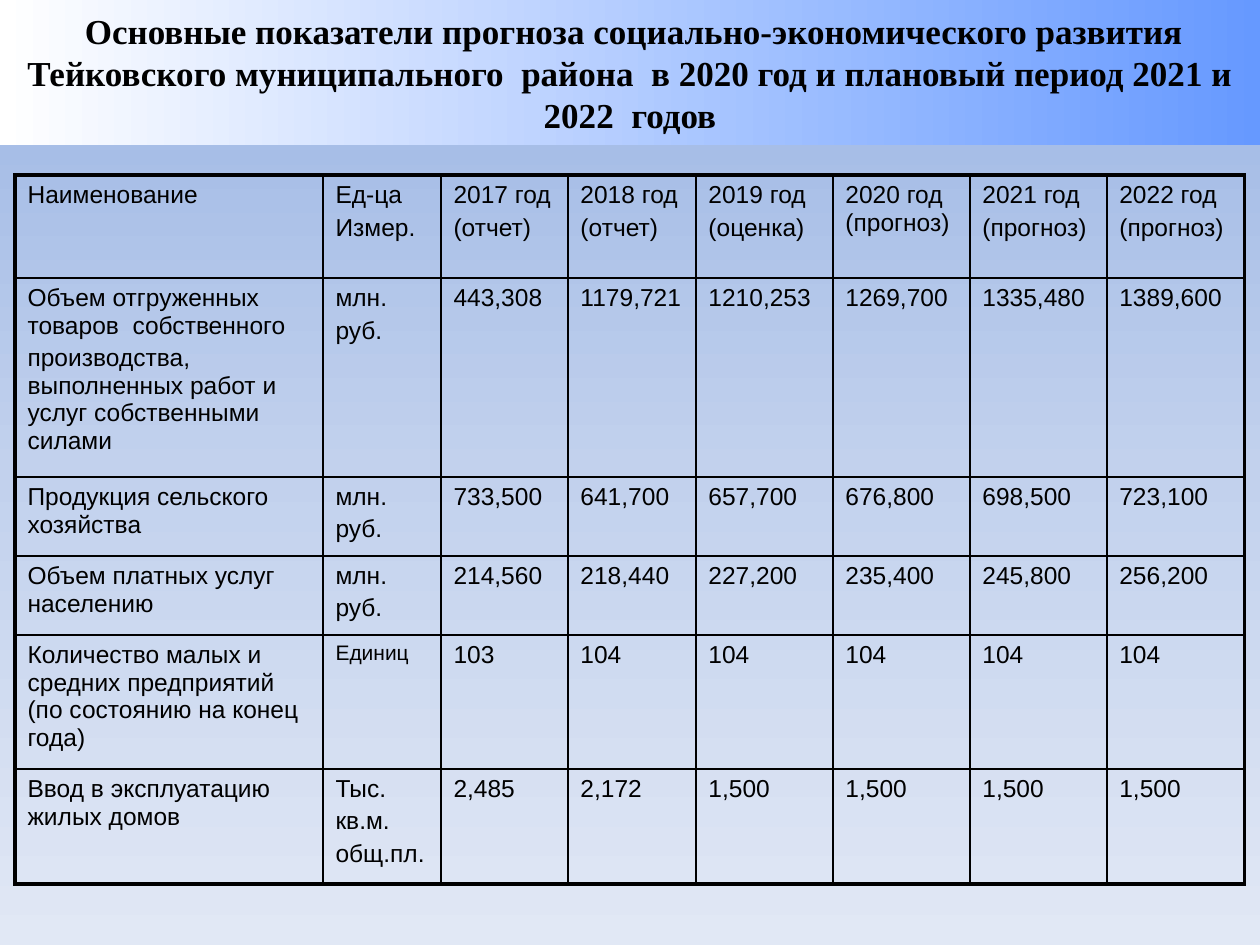
from copy import deepcopy
from pptx import Presentation
from pptx.dml.color import RGBColor as Rgb
from pptx.enum.shapes import MSO_SHAPE as Shape
from pptx.enum.text import MSO_ANCHOR as Anchor, PP_ALIGN as Align
from pptx.oxml.ns import qn
from pptx.oxml.xmlchemy import OxmlElement as Node
from pptx.util import Pt

PX = 914400 / 126
HEX = {"ink": "000000", "white": "FFFFFF", "blue": "6699FF",
       "top": "9AB5E4", "mid": "C2D1ED", "low": "E1E8F5"}
HEAD = ("Основные показатели прогноза социально-экономического развития "
        "Тейковского муниципального  района  в 2020 год и плановый период "
        "2021 и 2022  годов")
COLS = [308, 118, 127, 128, 137, 137, 137, 138]
ROWS = [103, 199, 79, 79, 134, 115]
DATA = [
    ["Наименование", "Ед-ца\nИзмер.", "2017 год\n(отчет)", "2018 год\n(отчет)",
     "2019 год\n(оценка)", "2020 год (прогноз)", "2021 год\n(прогноз)",
     "2022 год\n(прогноз)"],
    ["Объем отгруженных товаров  собственного\n"
     "производства, выполненных работ и услуг собственными силами",
     "млн.\nруб.", "443,308", "1179,721", "1210,253", "1269,700", "1335,480",
     "1389,600"],
    ["Продукция сельского хозяйства", "млн.\nруб.", "733,500", "641,700",
     "657,700", "676,800", "698,500", "723,100"],
    ["Объем платных услуг населению", "млн.\nруб.", "214,560", "218,440",
     "227,200", "235,400", "245,800", "256,200"],
    ["Количество малых и средних предприятий (по состоянию на конец года)",
     "Единиц", "103", "104", "104", "104", "104", "104"],
    ["Ввод в эксплуатацию жилых домов", "Тыс.\nкв.м.\nобщ.пл.", "2,485",
     "2,172", "1,500", "1,500", "1,500", "1,500"],
]


def emu(px):
    return round(px * PX)


def shade(root, fill, names, turn):
    fill.gradient()
    fill.gradient_angle = turn
    stops = root.find(".//" + qn("a:gsLst"))
    for _ in names[2:]:
        stops.append(deepcopy(stops[0]))
    for i, (stop, name) in enumerate(zip(fill.gradient_stops, names)):
        stop.position = i / (len(names) - 1)
        stop.color.rgb = Rgb.from_string(HEX[name])


def write(para, text, **form):
    run = para.add_run()
    run.text = text
    for key, val in form.items():
        setattr(run.font, key, val)
    run.font.color.rgb = Rgb.from_string(HEX["ink"])


def edge(cell, side, width):
    line = Node("a:ln" + side)
    line.set("w", str(Pt(width)))
    fill = Node("a:solidFill")
    tint = Node("a:srgbClr")
    tint.set("val", HEX["ink"])
    fill.append(tint)
    line.append(fill)
    cell.get_or_add_tcPr().append(line)


def banner(slide, box):
    rect = slide.shapes.add_shape(Shape.RECTANGLE, *map(emu, box))
    rect.shadow.inherit = False
    rect.line.fill.background()
    shade(rect.element, rect.fill, ["white", "blue"], 0)
    frame = rect.text_frame
    for key, val in {"word_wrap": True, "vertical_anchor": Anchor.MIDDLE}.items():
        setattr(frame, key, val)
    para = frame.paragraphs[0]
    para.alignment = Align.CENTER
    form = {"size": Pt(20), "bold": True}
    write(para, " ", name="Calibri", **form)
    write(para, HEAD, name="Times New Roman", **form)


def fill_cell(cell, text, size, sides):
    for side, width in sides.items():
        edge(cell._tc, side, width)
    cell.fill.background()
    frame = cell.text_frame
    for i, part in enumerate(text.split("\n")):
        para = frame.add_paragraph() if i else frame.paragraphs[0]
        para.space_before = Pt(size * 0.2)
        write(para, part, name="Arial", size=Pt(size))


def grid(slide, box):
    rows, cols = len(ROWS), len(COLS)
    table = slide.shapes.add_table(rows, cols, *map(emu, box)).table
    for key in ("first_row", "horz_banding"):
        setattr(table, key, False)
    for col, wide in zip(table.columns, COLS):
        col.width = emu(wide)
    for row, high in zip(table.rows, ROWS):
        row.height = emu(high)
    for r, line in enumerate(DATA):
        for c, text in enumerate(line):
            outer = {"L": c == 0, "R": c == cols - 1,
                     "T": r == 0, "B": r == rows - 1}
            sides = {k: 2.25 if out else 1 for k, out in outer.items()}
            size = 12 if text == "Единиц" else 14
            fill_cell(table.cell(r, c), text, size, sides)


def main():
    deck = Presentation()
    deck.slide_width, deck.slide_height = emu(1260), emu(945)
    slide = deck.slides.add_slide(deck.slide_layouts[6])
    back = slide.background.fill
    shade(slide.element, back, ["top", "mid", "low"], 270)
    banner(slide, (0, 0, 1260, 145))
    grid(slide, (15, 175, sum(COLS), sum(ROWS)))
    deck.save("out.pptx")


if __name__ == "__main__":
    main()
